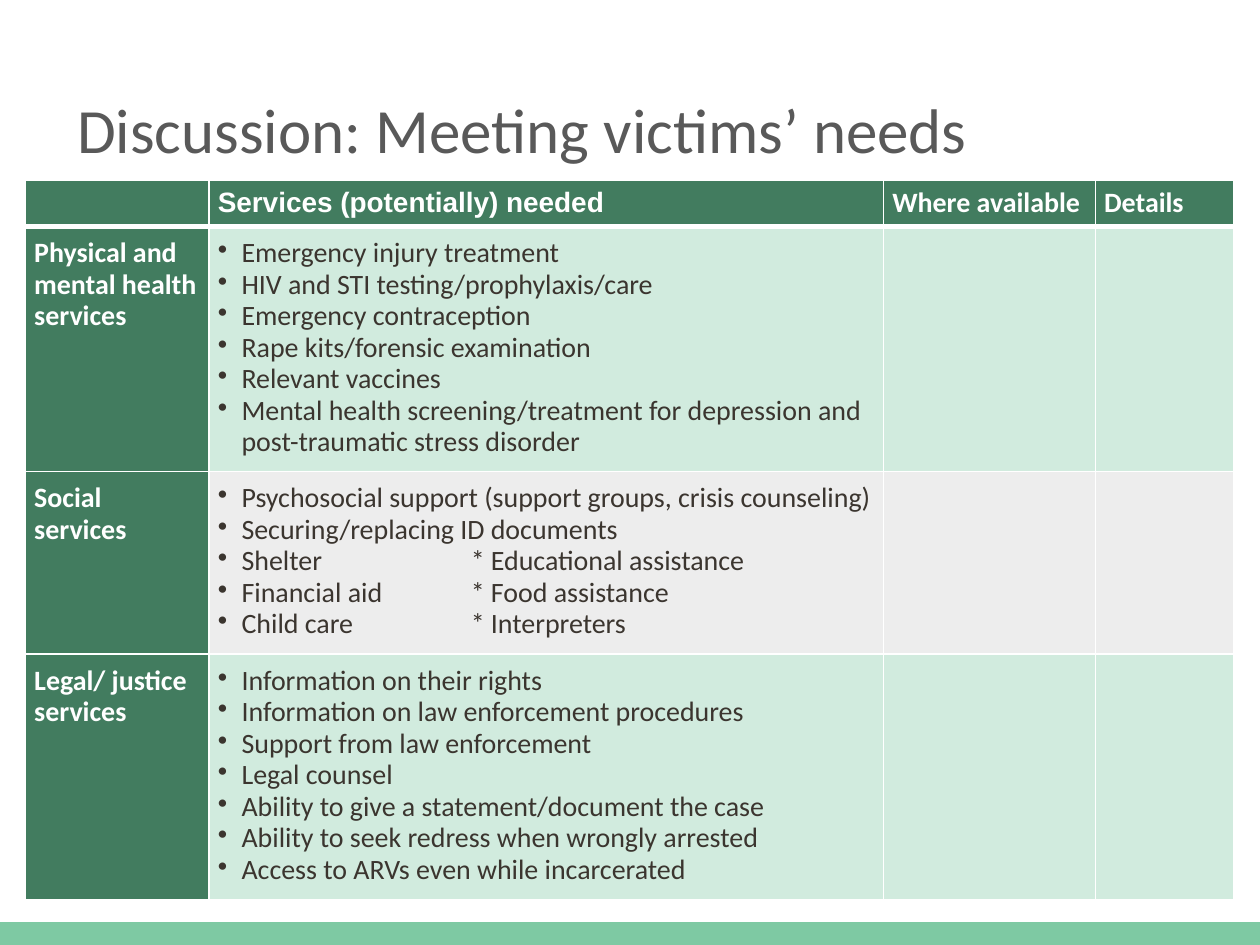
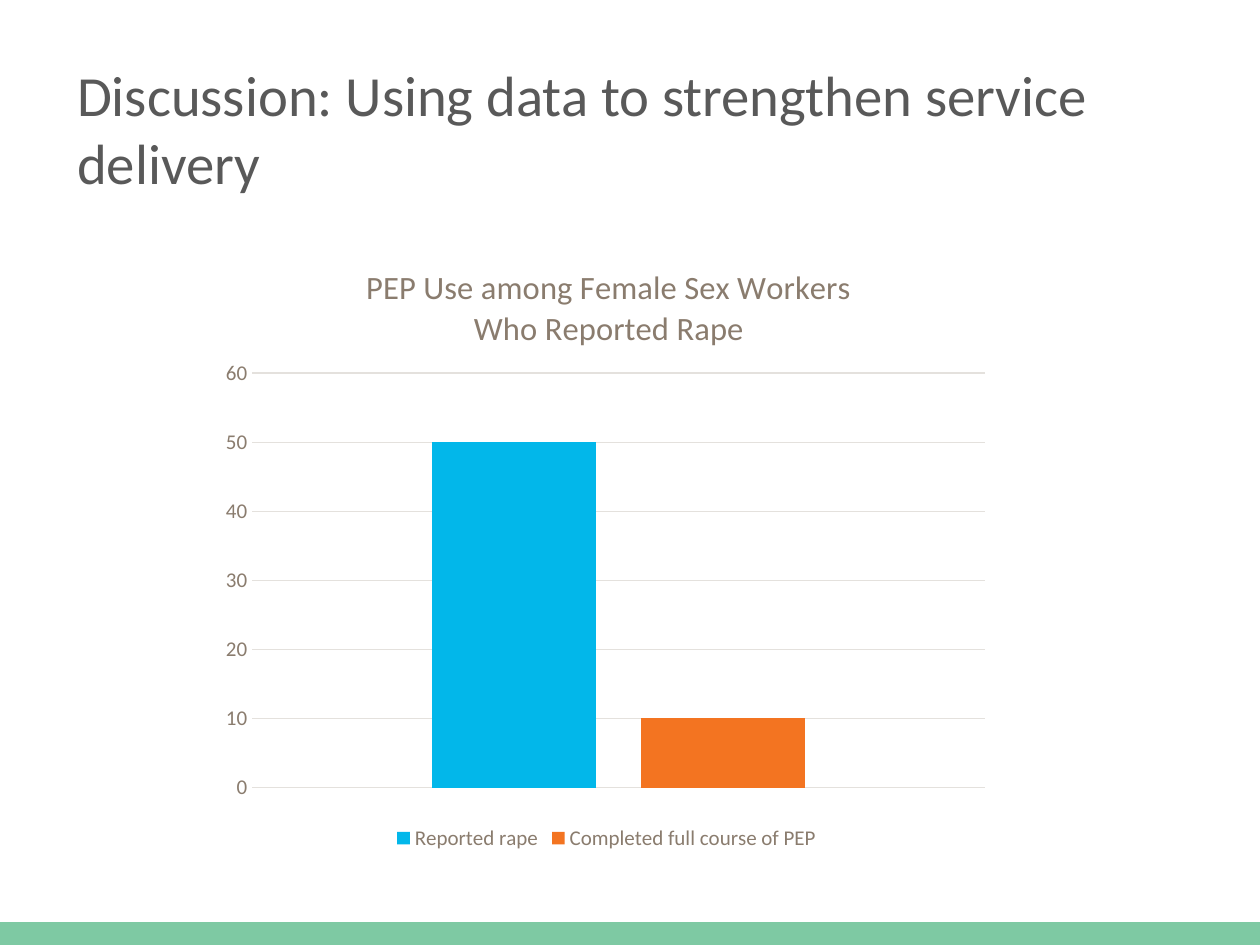
from lxml import etree
from pptx import Presentation
from pptx.chart.data import CategoryChartData
from pptx.dml.color import RGBColor
from pptx.enum.chart import XL_CHART_TYPE, XL_LEGEND_POSITION, XL_TICK_MARK
from pptx.enum.shapes import MSO_SHAPE
from pptx.enum.text import MSO_ANCHOR, MSO_AUTO_SIZE, PP_ALIGN
from pptx.oxml.ns import qn
from pptx.util import Cm, Pt

COLUMN = XL_CHART_TYPE.COLUMN_CLUSTERED
BOTTOM = XL_LEGEND_POSITION.BOTTOM
NO_TICK = XL_TICK_MARK.NONE
RECTANGLE = MSO_SHAPE.RECTANGLE
TOP, MIDDLE = MSO_ANCHOR.TOP, MSO_ANCHOR.MIDDLE
NO_FIT = MSO_AUTO_SIZE.NONE
LEFT = PP_ALIGN.LEFT

# Shared look
FONT = "Calibri"
WHITE, GREEN, BAND_GREEN = "FFFFFF", "427C5F", "7EC9A3"
MINT, GREY, INK = "D1EBDE", "EDEDED", "3B352F"
TITLE_GREY, CHART_BROWN, GRID = "595959", "8A7C6E", "E4E1DD"
TITLE_ONLY = 5
TITLE_PLACE = {"left": Cm(1.3), "top": Cm(1.24), "width": Cm(22.83), "height": Cm(2.69)}
LABEL_FORMAT = {"name": FONT, "size": Pt(16), "bold": True}
ITEM_FORMAT = {"name": FONT, "size": Pt(16), "bold": False}
AXIS_FORMAT = {"name": FONT, "size": Pt(12), "bold": False}

# Table of needs
COLUMN_WIDTHS = [3.7, 13.6, 4.27, 2.8]
ROW_HEIGHTS = [0.93, 4.93, 3.66, 4.96]
HEADERS = ["", "Services (potentially) needed", "Where available", "Details"]
NEEDS = [
    ("Physical and mental health services", [
        "Emergency injury treatment",
        "HIV and STI testing/prophylaxis/care",
        "Emergency contraception",
        "Rape kits/forensic examination",
        "Relevant vaccines",
        "Mental health screening/treatment for depression and "
        "post-traumatic stress disorder",
    ]),
    ("Social services", [
        "Psychosocial support (support groups, crisis counseling)",
        "Securing/replacing ID documents",
        "Shelter\t* Educational assistance",
        "Financial aid\t* Food assistance",
        "Child care\t* Interpreters",
    ]),
    ("Legal/ justice services", [
        "Information on their rights",
        "Information on law enforcement procedures",
        "Support from law enforcement",
        "Legal counsel",
        "Ability to give a statement/document the case",
        "Ability to seek redress when wrongly arrested",
        "Access to ARVs even while incarcerated",
    ]),
]

# Chart of PEP use
CHART_TITLE = ["PEP Use among Female Sex Workers", "Who Reported Rape"]
PEP_SERIES = [("Reported rape", 50, "02B7EA"),
              ("Completed full course of PEP", 10, "F37421")]


def rgb(color):
    return RGBColor.from_string(color)


def set_all(target, values):
    for name, value in values.items():
        setattr(target, name, value)


def format_font(font, values, color):
    set_all(font, values)
    font.color.rgb = rgb(color)


def paint(fill, color):
    fill.solid()
    fill.fore_color.rgb = rgb(color)


def add_span(para, text, values, color):
    span = para.add_run()
    span.text = text
    format_font(span.font, values, color)


def add_page(deck, title, size):
    """Add a page with the bottom band and a formatted title."""
    page = deck.slides.add_slide(deck.slide_layouts[TITLE_ONLY])
    band = page.shapes.add_shape(RECTANGLE, 0, Cm(18.59), Cm(25.53), Cm(0.53))
    band.shadow.inherit = False
    paint(band.fill, BAND_GREEN)
    band.line.fill.background()

    box = page.shapes.title
    set_all(box, TITLE_PLACE)
    set_all(box.text_frame, {"word_wrap": True, "auto_size": NO_FIT,
                             "vertical_anchor": MIDDLE})
    para = box.text_frame.paragraphs[0]
    para.alignment = LEFT
    add_span(para, title, {"name": FONT, "size": Pt(size)}, TITLE_GREY)
    return page


def set_borders(cell, bottom=1):
    """Draw white borders, which come before the fill in the cell's XML."""
    properties = cell._tc.get_or_add_tcPr()
    widths = {"lnL": 1, "lnR": 1, "lnT": 1, "lnB": bottom}
    for index, (side, width) in enumerate(widths.items()):
        line = etree.Element(qn(f"a:{side}"), w=str(Pt(width)))
        solid = etree.SubElement(line, qn("a:solidFill"))
        etree.SubElement(solid, qn("a:srgbClr"), val=WHITE)
        properties.insert(index, line)


def style_cell(cell, color, anchor=TOP, padding=0.25, bottom=1):
    paint(cell.fill, color)
    set_borders(cell, bottom)
    set_all(cell, {"margin_left": Cm(0.18), "margin_right": Cm(0.18),
                   "margin_top": Cm(padding), "margin_bottom": Cm(padding),
                   "vertical_anchor": anchor})


def add_bullet(para):
    """Give a list item its bullet, hanging indent and second text column."""
    properties = para._p.get_or_add_pPr()
    properties.set("marL", str(Cm(0.48)))
    properties.set("indent", str(Cm(-0.48)))
    etree.SubElement(properties, qn("a:buChar"), char="•")
    tabs = etree.SubElement(properties, qn("a:tabLst"))
    etree.SubElement(tabs, qn("a:tab"), pos=str(Cm(5.1)), algn="l")


def fill_list(cell, items):
    frame = cell.text_frame
    for index, item in enumerate(items):
        para = frame.add_paragraph() if index else frame.paragraphs[0]
        para.line_spacing = Pt(18)
        add_bullet(para)
        add_span(para, item, ITEM_FORMAT, INK)


def add_needs_table(page):
    frame = page.shapes.add_table(len(ROW_HEIGHTS), len(COLUMN_WIDTHS), Cm(0.51), Cm(3.63),
                                  Cm(sum(COLUMN_WIDTHS)), Cm(sum(ROW_HEIGHTS)))
    table = frame.table
    for column, width in zip(table.columns, COLUMN_WIDTHS):
        column.width = Cm(width)
    for row, height in zip(table.rows, ROW_HEIGHTS):
        row.height = Cm(height)

    # Header row
    for index, header in enumerate(HEADERS):
        cell = table.cell(0, index)
        style_cell(cell, GREEN, MIDDLE, 0.12 if header else 0, bottom=3)
        if header:
            name = "Arial" if index == 1 else FONT
            add_span(cell.text_frame.paragraphs[0], header, {**LABEL_FORMAT, "name": name}, WHITE)

    # One row for each kind of service
    for row, (label, items) in enumerate(NEEDS, start=1):
        tint = MINT if row % 2 else GREY
        for column in range(len(HEADERS)):
            style_cell(table.cell(row, column), tint if column else GREEN)
        para = table.cell(row, 0).text_frame.paragraphs[0]
        para.line_spacing = Pt(18)
        add_span(para, label, LABEL_FORMAT, WHITE)
        fill_list(table.cell(row, 1), items)


def place_part(parent, values, before):
    """Fix a chart part at fractions of the chart's size."""
    for old in parent.findall(qn("c:layout")):
        parent.remove(old)
    layout = etree.Element(qn("c:layout"))
    manual = etree.SubElement(layout, qn("c:manualLayout"))
    for name, value in values.items():
        etree.SubElement(manual, qn(f"c:{name}"), val=str(value))
    parent.find(qn(before)).addprevious(layout)


def add_pep_chart(page):
    data = CategoryChartData()
    data.categories = ["1"]
    for name, value, _ in PEP_SERIES:
        data.add_series(name, [value])
    chart = page.shapes.add_chart(COLUMN, Cm(4.29), Cm(4.78), Cm(15.88), Cm(12.47), data).chart
    format_font(chart.font, {"name": FONT, "size": Pt(10)}, INK)

    # Title
    frame = chart.chart_title.text_frame
    for index, line in enumerate(CHART_TITLE):
        para = frame.add_paragraph() if index else frame.paragraphs[0]
        add_span(para, line, {"name": FONT, "size": Pt(18.6), "bold": False}, CHART_BROWN)
    place_part(chart.chart_title._element, {"xMode": "edge", "yMode": "edge",
                                            "x": 0.19, "y": 0.04}, "c:overlay")

    # Columns
    plot = chart.plots[0]
    set_all(plot, {"gap_width": 219, "overlap": -27, "vary_by_categories": False})
    for series, (_, _, color) in zip(plot.series, PEP_SERIES):
        paint(series.format.fill, color)
    place_part(chart._chartSpace.chart.plotArea,
               {"layoutTarget": "inner", "xMode": "edge", "yMode": "edge",
                "x": 0.05, "y": 0.22, "w": 0.93, "h": 0.67}, "c:barChart")

    # Axes and legend
    chart.category_axis.visible = False
    axis = chart.value_axis
    set_all(axis, {"minimum_scale": 0, "maximum_scale": 60, "major_unit": 10,
                   "major_tick_mark": NO_TICK, "minor_tick_mark": NO_TICK})
    axis.format.line.fill.background()
    axis.major_gridlines.format.line.width = Pt(0.75)
    axis.major_gridlines.format.line.color.rgb = rgb(GRID)
    format_font(axis.tick_labels.font, AXIS_FORMAT, CHART_BROWN)
    chart.has_legend = True
    set_all(chart.legend, {"position": BOTTOM, "include_in_layout": False})
    format_font(chart.legend.font, AXIS_FORMAT, CHART_BROWN)


def main():
    deck = Presentation()
    set_all(deck, {"slide_width": Cm(25.4), "slide_height": Cm(19.05)})
    add_needs_table(add_page(deck, "Discussion: Meeting victims’ needs", 36))
    add_pep_chart(add_page(deck, "Discussion: Using data to strengthen service delivery", 32.4))
    deck.save("out.pptx")


if __name__ == "__main__":
    main()
